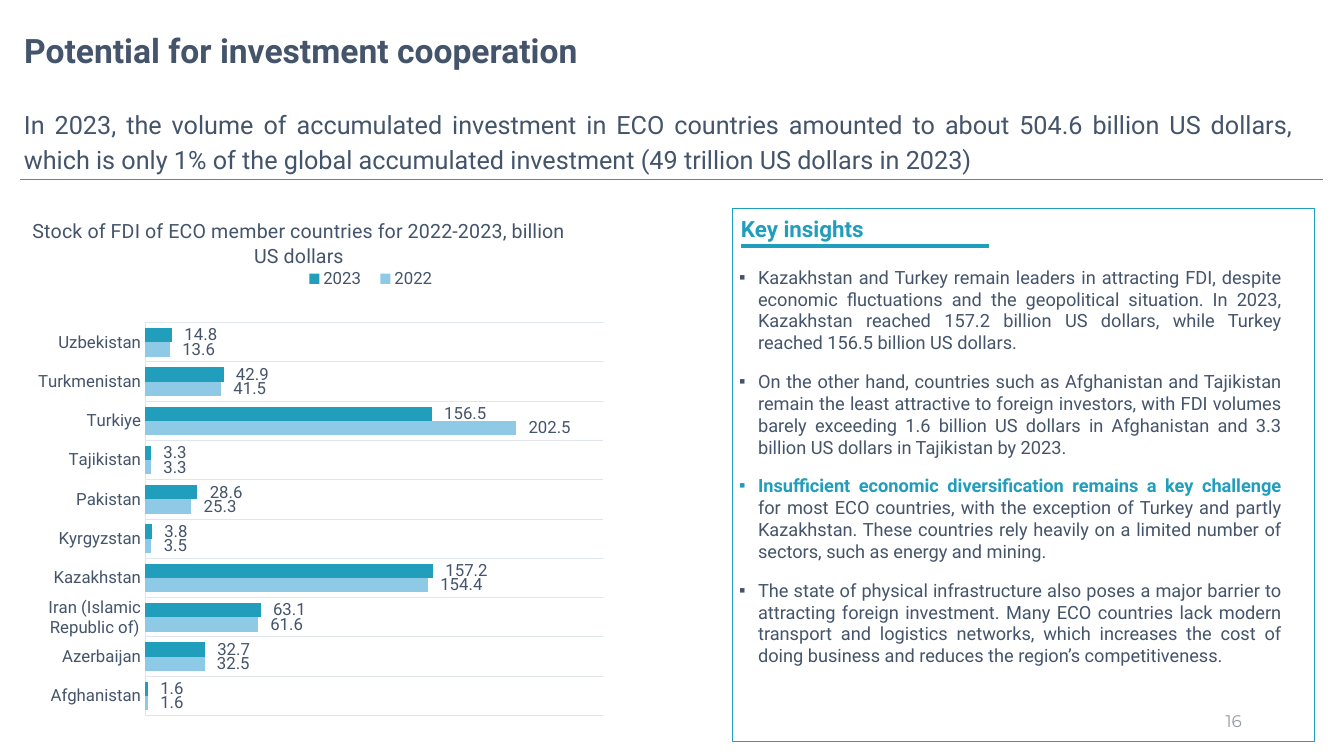
from lxml.etree import SubElement
from pptx import Presentation
from pptx.chart.data import CategoryChartData
from pptx.dml.color import RGBColor
from pptx.enum.chart import XL_CHART_TYPE, XL_LABEL_POSITION, XL_LEGEND_POSITION, XL_TICK_MARK
from pptx.enum.shapes import MSO_CONNECTOR, MSO_SHAPE
from pptx.enum.text import MSO_ANCHOR, MSO_AUTO_SIZE, PP_ALIGN
from pptx.oxml import parse_xml
from pptx.oxml.ns import nsdecls, qn
from pptx.util import Emu, Pt

SCALE = 914400 / 100.8
COLORS = {"text": "44546A", "teal": "219EBC", "sky": "8ECAE6", "grid": "E0E5EB", "page": "9499A1"}
FORMAT = r'_-* #\ ##0.0_-;\-* #\ ##0.0_-;_-* "-"??_-'

LEAD = ("In 2023, the volume of accumulated investment in ECO countries amounted to about "
        "504.6 billion US dollars, which is only 1% of the global accumulated investment "
        "(49 trillion US dollars in 2023)")
STOCKS = {
    "Afghanistan": (1.6, 1.6),
    "Azerbaijan": (32.5, 32.7),
    "Iran (Islamic Republic of)": (61.6, 63.1),
    "Kazakhstan": (154.4, 157.2),
    "Kyrgyzstan": (3.5, 3.8),
    "Pakistan": (25.3, 28.6),
    "Tajikistan": (3.3, 3.3),
    "Turkiye": (202.5, 156.5),
    "Turkmenistan": (41.5, 42.9),
    "Uzbekistan": (13.6, 14.8),
}
SERIES = {"2022": "sky", "2023": "teal"}
INSIGHTS = [
    ("", "Kazakhstan and Turkey remain leaders in attracting FDI, despite economic fluctuations "
     "and the geopolitical situation. In 2023, Kazakhstan reached 157.2 billion US dollars, "
     "while Turkey reached 156.5 billion US dollars."),
    ("", "On the other hand, countries such as Afghanistan and Tajikistan remain the least "
     "attractive to foreign investors, with FDI volumes barely exceeding 1.6 billion US dollars "
     "in Afghanistan and 3.3 billion US dollars in Tajikistan by 2023."),
    ("Insufficient economic diversification remains a key challenge ",
     "for most ECO countries, with the exception of Turkey and partly Kazakhstan. These countries "
     "rely heavily on a limited number of sectors, such as energy and mining."),
    ("", "The state of physical infrastructure also poses a major barrier to attracting foreign "
     "investment. Many ECO countries lack modern transport and logistics networks, which increases "
     "the cost of doing business and reduces the region’s competitiveness."),
]


def px(n):
    return Emu(round(n * SCALE))


def color(name):
    return RGBColor.from_string(COLORS[name])


def style(font, size=12, tint="text", bold=False, face="Roboto"):
    font.size, font.bold, font.name = Pt(size), bold, face
    font.color.rgb = color(tint)


def write(para, text, align=PP_ALIGN.LEFT, space=1.0, before=0, after=0, **look):
    para.alignment, para.line_spacing = align, space
    para.space_before, para.space_after = Pt(before), Pt(after)
    run = para.add_run()
    run.text = text
    style(run.font, **look)


def place(node, index, **parts):
    for old in node.findall(qn("c:layout")):
        node.remove(old)
    layout = parse_xml(f"<c:layout {nsdecls('c')}><c:manualLayout/></c:layout>")
    for key, val in parts.items():
        SubElement(layout[0], qn(f"c:{key}")).set("val", str(val))
    node.insert(index, layout)


class Board:
    def __init__(self, slide):
        self.slide, self.shapes = slide, slide.shapes

    def frame(self, shape, box, anchor=MSO_ANCHOR.TOP, inset=None):
        shape.left, shape.top, shape.width, shape.height = map(px, box)
        frame = shape.text_frame
        frame.word_wrap, frame.auto_size = True, MSO_AUTO_SIZE.NONE
        frame.vertical_anchor = anchor
        if inset is not None:
            frame.margin_left = frame.margin_right = px(inset)
            frame.margin_top = frame.margin_bottom = px(inset)
        return frame

    def title(self, text, box, **look):
        frame = self.frame(self.shapes.title, box, MSO_ANCHOR.MIDDLE)
        write(frame.paragraphs[0], text, **look)

    def text(self, text, box, anchor=MSO_ANCHOR.TOP, inset=None, **look):
        shape = self.shapes.add_textbox(*map(px, box))
        write(self.frame(shape, box, anchor, inset).paragraphs[0], text, **look)

    def line(self, x, y, width, weight):
        line = self.shapes.add_connector(MSO_CONNECTOR.STRAIGHT, px(x), px(y), px(x + width), px(y))
        line.line.color.rgb, line.line.width = color("teal"), Pt(weight)
        SubElement(line.element.spPr, qn("a:effectLst"))

    def panel(self, box):
        rect = self.shapes.add_shape(MSO_SHAPE.RECTANGLE, *map(px, box))
        rect.shadow.inherit = False
        rect.fill.background()
        rect.line.color.rgb, rect.line.width = color("teal"), Pt(0.25)

    def list(self, items, box):
        frame = self.frame(self.slide.placeholders[1], box)
        for i, (lead, rest) in enumerate(items):
            para = frame.add_paragraph() if i else frame.paragraphs[0]
            props = para._p.get_or_add_pPr()
            props.set("marL", str(px(19)))
            props.set("indent", str(px(-19)))
            SubElement(props, qn("a:buFont")).set("typeface", "Arial")
            SubElement(props, qn("a:buChar")).set("char", "▪")
            look = dict(align=PP_ALIGN.JUSTIFY, before=6 if i else 0, after=6, size=13)
            if lead:
                write(para, lead, tint="teal", bold=True, **look)
            write(para, rest, **look)

    def chart(self, title, box):
        data = CategoryChartData(number_format=FORMAT)
        data.categories = list(STOCKS)
        for name, vals in zip(SERIES, zip(*STOCKS.values())):
            data.add_series(name, vals)
        chart = self.shapes.add_chart(XL_CHART_TYPE.BAR_CLUSTERED, *map(px, box), data).chart
        style(chart.font)
        write(chart.chart_title.text_frame.paragraphs[0], title, align=PP_ALIGN.CENTER, size=14)
        chart.has_legend = True
        legend = chart.legend
        legend.position, legend.include_in_layout = XL_LEGEND_POSITION.TOP, False
        style(legend.font)
        plot = chart.plots[0]
        plot.gap_width, plot.overlap, plot.vary_by_categories = 75, 0, False
        for series, tint in zip(plot.series, SERIES.values()):
            series.format.fill.solid()
            series.format.fill.fore_color.rgb = color(tint)
        plot.has_data_labels = True
        labels = plot.data_labels
        labels.show_value, labels.position = True, XL_LABEL_POSITION.OUTSIDE_END
        labels.number_format, labels.number_format_is_linked = FORMAT, False
        style(labels.font)
        axis = chart.category_axis
        axis.major_tick_mark = XL_TICK_MARK.NONE
        axis.has_major_gridlines = True
        style(axis.tick_labels.font)
        for line in (axis.format.line, axis.major_gridlines.format.line):
            line.color.rgb, line.width = color("grid"), Pt(0.75)
        scale = chart.value_axis
        scale.minimum_scale, scale.maximum_scale = 0, 250
        scale.has_major_gridlines = scale.visible = False
        root = chart.element.chart
        edge = dict(xMode="edge", yMode="edge")
        place(root.find(qn("c:title")), 1, **edge, x=0.01, y=0.01)
        place(legend._element, 1, **edge, x=0.4, y=0.11, w=0.22, h=0.05)
        place(root.plotArea, 0, layoutTarget="inner", **edge, x=0.18, y=0.22, w=0.67, h=0.76)


def main():
    deck = Presentation()
    deck.slide_width, deck.slide_height = px(1344), px(756)
    board = Board(deck.slides.add_slide(deck.slide_layouts[1]))
    board.title("Potential for investment cooperation", (14, 15, 1289, 76),
                size=24, bold=True, space=0.9)
    board.line(20, 179, 1303, 0.5)
    board.text("16", (950, 701, 302, 40), MSO_ANCHOR.MIDDLE,
               align=PP_ALIGN.RIGHT, tint="page", face="Montserrat")
    board.text(LEAD, (14, 100, 1289, 78), align=PP_ALIGN.JUSTIFY, space=1.15, after=6, size=18)
    board.chart("Stock of FDI of ECO member countries for 2022-2023, billion US dollars",
                (22, 209, 684, 517))
    board.panel((732, 208, 582, 533))
    board.text("Key insights", (741, 208, 179, 34), MSO_ANCHOR.BOTTOM, 0,
               size=16, tint="teal", bold=True)
    board.line(741, 246, 248, 2.25)
    board.list(INSIGHTS, (729, 261, 562, 480))
    deck.save("out.pptx")


if __name__ == "__main__":
    main()
